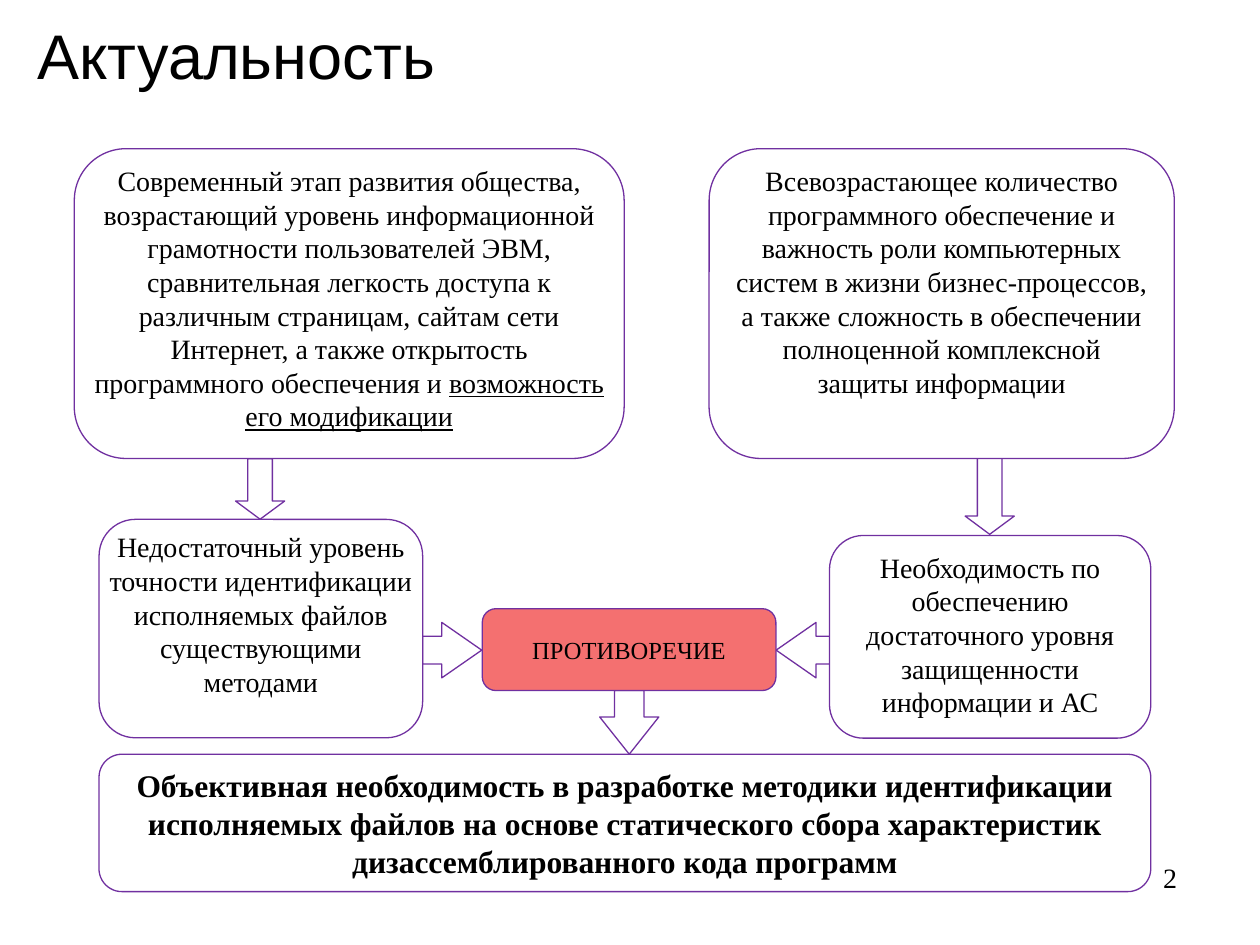
import pptx
import pptx.dml.color
import pptx.enum.shapes
import pptx.enum.text
import pptx.util
from dataclasses import dataclass

Pt = pptx.util.Pt
Kind = pptx.enum.shapes.MSO_SHAPE
Align = pptx.enum.text.PP_ALIGN
Anchor = pptx.enum.text.MSO_ANCHOR


@dataclass(frozen=True)
class Theme:
    ink: str = "000000"
    paper: str = "FFFFFF"
    edge: str = "7030A0"
    alert: str = "F47070"
    head: str = "Arial"
    body: str = "Times New Roman"
    title: int = 36
    strong: int = 18
    text: int = 16
    label: int = 14
    line: float = 0.75


theme = Theme()


def paint(code):
    return pptx.dml.color.RGBColor.from_string(code)


def add_run(para, words, size, font=theme.body, bold=False, under=False):
    run = para.add_run()
    run.text = words
    face = run.font
    face.name, face.size = font, Pt(size)
    face.bold, face.underline = bold, under
    face.color.rgb = paint(theme.ink)


def set_frame(shape, pads, align, anchor):
    frame = shape.text_frame
    frame.word_wrap = True
    frame.vertical_anchor = anchor
    (frame.margin_left, frame.margin_top,
     frame.margin_right, frame.margin_bottom) = [Pt(pad) for pad in pads]
    para = frame.paragraphs[0]
    para.alignment = align
    return para


def add_form(slide, kind, place, fill=theme.paper):
    shape = slide.shapes.add_shape(kind, *[Pt(n) for n in place])
    shape.shadow.inherit = False
    shape.fill.solid()
    shape.fill.fore_color.rgb = paint(fill)
    shape.line.color.rgb = paint(theme.edge)
    shape.line.width = Pt(theme.line)
    return shape


def add_box(slide, place, words, size=theme.text, pads=(5.8, 2.9, 5.8, 2.9),
            fill=theme.paper, anchor=Anchor.TOP, bold=False, tail=""):
    shape = add_form(slide, Kind.ROUNDED_RECTANGLE, place, fill)
    para = set_frame(shape, pads, Align.CENTER, anchor)
    add_run(para, words, size, bold=bold)
    if tail:
        add_run(para, tail, size, under=True)


def add_arrow(slide, kind, place, tip):
    shape = add_form(slide, kind, place)
    shape.adjustments[0] = 0.5
    shape.adjustments[1] = tip


def add_note(slide, place, words, size, font, align, anchor):
    box = slide.shapes.add_textbox(*[Pt(n) for n in place])
    para = set_frame(box, (7.2, 3.6, 7.2, 3.6), align, anchor)
    add_run(para, words, size, font)
    return para


def main():
    deck = pptx.Presentation()
    deck.slide_width, deck.slide_height = Pt(720), Pt(540)
    slide = deck.slides.add_slide(deck.slide_layouts[6])

    # Title and page number
    title = add_note(slide, (14.4, -18.7, 620.6, 104.4), "Актуальность",
                     theme.title, theme.head, Align.LEFT, Anchor.MIDDLE)
    title.line_spacing = 0.9
    add_note(slide, (499.7, 488.2, 180, 26.6), "2",
             theme.text, theme.body, Align.RIGHT, Anchor.TOP)

    # Arrows: kind, place, length of tip
    for kind, place, tip in (
        (Kind.DOWN_ARROW, (134.6, 262.1, 28.1, 34.6), 0.37),
        (Kind.DOWN_ARROW, (551.5, 261.4, 28.1, 43.9), 0.37),
        (Kind.RIGHT_ARROW, (241.5, 355.7, 33.8, 31.7), 0.72),
        (Kind.LEFT_ARROW, (443.5, 355.7, 32.4, 31.7), 0.72),
        (Kind.DOWN_ARROW, (342.7, 394.6, 33.8, 36.4), 0.63),
    ):
        add_arrow(slide, kind, place, tip)

    # Premises
    add_box(slide, (42.5, 85, 314.2, 177),
            "Современный этап развития общества, возрастающий уровень "
            "информационной грамотности пользователей ЭВМ, сравнительная "
            "легкость доступа к различным страницам, сайтам сети Интернет, "
            "а также открытость программного обеспечения и ",
            pads=(0, 0, 0, 0), tail="возможность его модификации")
    add_box(slide, (405.2, 85, 265.8, 177),
            "Всевозрастающее количество программного обеспечение и важность "
            "роли компьютерных систем в жизни бизнес-процессов, а также "
            "сложность в обеспечении полноценной комплексной защиты "
            "информации", pads=(5.8, 0, 5.8, 2.9))

    # Two sides and the conflict between them
    add_box(slide, (56.6, 296.8, 184.9, 124.8),
            "Недостаточный уровень точности идентификации исполняемых "
            "файлов существующими методами", pads=(0, 0, 0, 0))
    add_box(slide, (474, 306, 183.6, 115.8),
            "Необходимость по обеспечению достаточного уровня защищенности "
            "информации и АС")
    add_box(slide, (275.6, 347.8, 167.8, 46.8), "ПРОТИВОРЕЧИЕ",
            theme.label, fill=theme.alert, anchor=Anchor.MIDDLE)

    # Outcome
    add_box(slide, (56.6, 431, 601, 78.5),
            "Объективная необходимость в разработке методики идентификации "
            "исполняемых файлов на основе статического сбора характеристик "
            "дизассемблированного кода программ", theme.strong, bold=True)

    deck.save("out.pptx")


if __name__ == "__main__":
    main()
